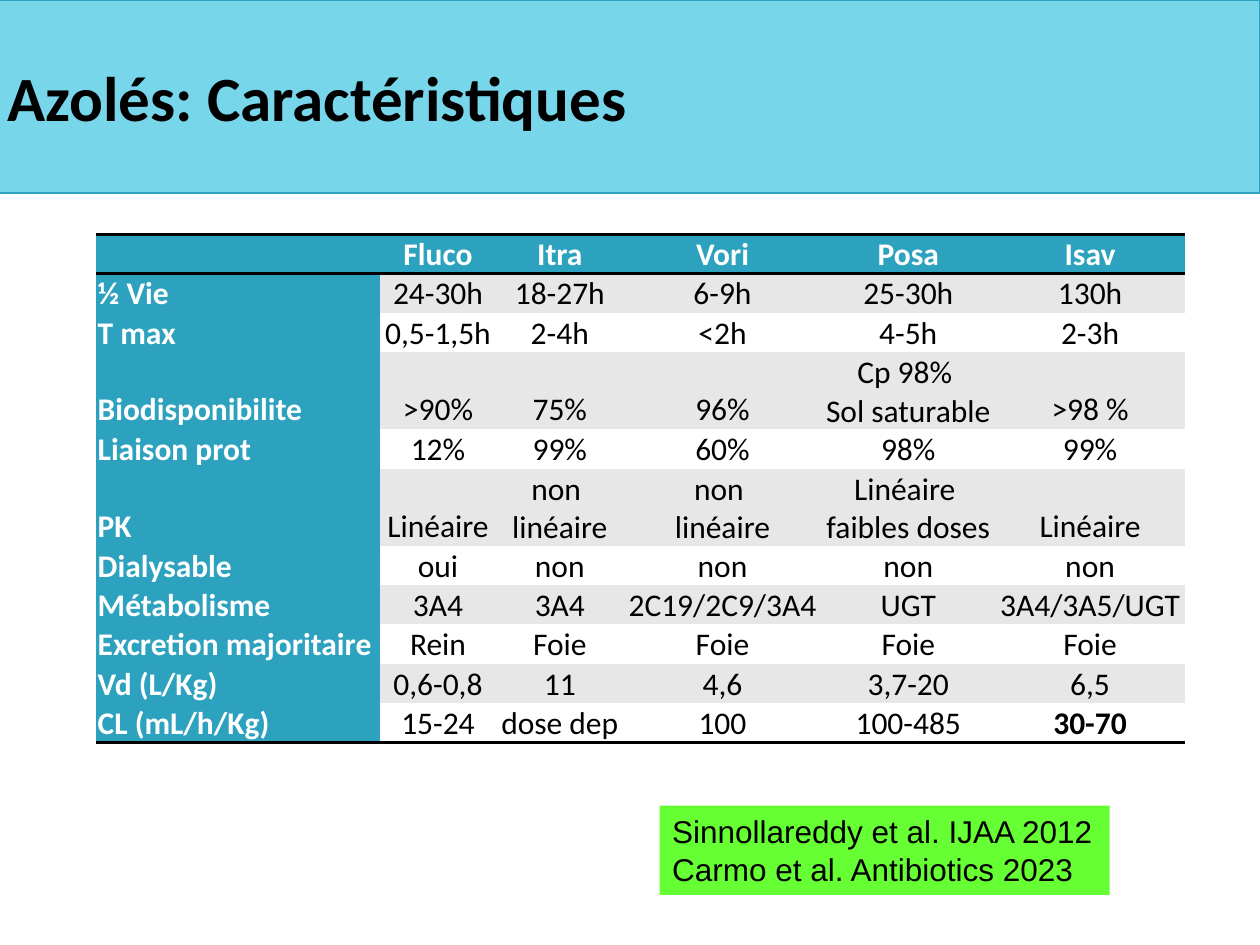
"""Build the slide that compares the pharmacology of azole antifungals."""
from dataclasses import dataclass
from typing import Any

import lxml.etree
import pptx
import pptx.dml.color
import pptx.enum.shapes
import pptx.enum.text
import pptx.oxml.ns
import pptx.util

Cm = pptx.util.Cm
Pt = pptx.util.Pt
ALIGN = pptx.enum.text.PP_ALIGN
ANCHOR = pptx.enum.text.MSO_ANCHOR
AUTO_SIZE = pptx.enum.text.MSO_AUTO_SIZE

BLACK, WHITE, GREY = "000000", "FFFFFF", "E7E7E7"
TEAL, SKY, GREEN = "2DA2BF", "78D6EA", "66FF33"
NO_GRID_STYLE = "{2D5ABB26-0587-4C30-8999-92F81FD0307C}"

COLUMN_WIDTHS = (5.72, 2.34, 2.57, 3.99, 3.5, 3.83)
ROW_HEIGHT = 0.53
CELL_FORMAT = {
    "margin_left": Cm(0.03), "margin_right": Cm(0.03),
    "margin_top": Cm(0.03), "margin_bottom": 0,
    "vertical_anchor": ANCHOR.BOTTOM,
}


@dataclass(frozen=True)
class Box:
    left: float
    top: float
    width: float
    height: float

    def lengths(self) -> tuple:
        return Cm(self.left), Cm(self.top), Cm(self.width), Cm(self.height)


@dataclass(frozen=True)
class TextStyle:
    font: str
    size: float
    color: str = BLACK
    bold: bool = False
    align: Any = ALIGN.LEFT


@dataclass(frozen=True)
class Property:
    label: str
    values: tuple
    bold_last: bool = False


DRUGS = Property("", ("Fluco", "Itra", "Vori", "Posa", "Isav"))
PROPERTIES = (
    Property("½ Vie", ("24-30h", "18-27h", "6-9h", "25-30h", "130h")),
    Property("T max", ("0,5-1,5h", "2-4h", "<2h", "4-5h", "2-3h")),
    Property("Biodisponibilite", (">90%", "75%", "96%", "Cp 98% \nSol saturable", ">98 %")),
    Property("Liaison prot", ("12%", "99%", "60%", "98%", "99%")),
    Property("PK", ("Linéaire", "non \nlinéaire", "non \nlinéaire",
                    "Linéaire \nfaibles doses", "Linéaire")),
    Property("Dialysable", ("oui", "non", "non", "non", "non")),
    Property("Métabolisme", ("3A4", "3A4", "2C19/2C9/3A4", "UGT", "3A4/3A5/UGT")),
    Property("Excretion majoritaire", ("Rein", "Foie", "Foie", "Foie", "Foie")),
    Property("Vd (L/Kg)", ("0,6-0,8", "11", "4,6", "3,7-20", "6,5")),
    Property("CL (mL/h/Kg)", ("15-24", "dose dep", "100", "100-485", "30-70"), bold_last=True),
)


def hex_color(value: str) -> pptx.dml.color.RGBColor:
    return pptx.dml.color.RGBColor.from_string(value)


def apply_format(target: Any, values: dict) -> None:
    for name, value in values.items():
        setattr(target, name, value)


def fill_solid(target: Any, color: str) -> None:
    target.fill.solid()
    target.fill.fore_color.rgb = hex_color(color)


def write_text(text_frame: Any, text: str, style: TextStyle) -> None:
    text_frame.text = text
    for paragraph in text_frame.paragraphs:
        paragraph.alignment = style.align
        for run in paragraph.runs:
            apply_format(run.font, {"name": style.font, "size": Pt(style.size), "bold": style.bold})
            run.font.color.rgb = hex_color(style.color)


def add_border(cell: Any, tag: str, position: int) -> None:
    qn = pptx.oxml.ns.qn
    line = lxml.etree.Element(qn(tag), w=str(Pt(2)))
    solid_fill = lxml.etree.SubElement(line, qn("a:solidFill"))
    lxml.etree.SubElement(solid_fill, qn("a:srgbClr"), val=BLACK)
    cell._tc.get_or_add_tcPr().insert(position, line)


def format_title(title: Any) -> None:
    box = Box(-0.1, 0, 25.5, 3.89)
    apply_format(title, dict(zip(("left", "top", "width", "height"), box.lengths())))
    fill_solid(title, SKY)
    title.line.color.rgb = hex_color(TEAL)
    title.line.width = Pt(0.75)
    apply_format(title.text_frame, {"vertical_anchor": ANCHOR.MIDDLE, "auto_size": AUTO_SIZE.NONE})
    write_text(title.text_frame, "Azolés: Caractéristiques", TextStyle("Calibri", 36, bold=True))


def add_property_table(slide: Any, box: Box) -> None:
    rows = (DRUGS, *PROPERTIES)
    last_row = len(rows) - 1
    frame = slide.shapes.add_table(len(rows), len(COLUMN_WIDTHS), *box.lengths())
    table = frame.table
    apply_format(table, {"first_row": False, "horz_banding": False})
    table._tbl.tblPr.find(pptx.oxml.ns.qn("a:tableStyleId")).text = NO_GRID_STYLE
    for column, width in zip(table.columns, COLUMN_WIDTHS):
        column.width = Cm(width)
    for row_index, entry in enumerate(rows):
        table.rows[row_index].height = Cm(ROW_HEIGHT)
        for column_index, text in enumerate((entry.label, *entry.values)):
            cell = table.cell(row_index, column_index)
            is_heading = row_index == 0 or column_index == 0
            is_last = column_index == len(entry.values)
            style = TextStyle(
                "Calibri", 18, WHITE if is_heading else BLACK,
                bold=is_heading or (entry.bold_last and is_last),
                align=ALIGN.CENTER if column_index else ALIGN.LEFT)
            apply_format(cell, CELL_FORMAT)
            write_text(cell.text_frame, text, style)
            fill_solid(cell, TEAL if is_heading else GREY if row_index % 2 else WHITE)
            if row_index in (0, last_row):
                add_border(cell, "a:lnB", 0)
            if row_index == 0:
                add_border(cell, "a:lnT", 0)
    frame.height = Cm(box.height)


def add_references(slide: Any, box: Box) -> None:
    references = slide.shapes.add_textbox(*box.lengths())
    fill_solid(references, GREEN)
    apply_format(references.text_frame, {"word_wrap": False, "auto_size": AUTO_SIZE.SHAPE_TO_FIT_TEXT})
    write_text(references.text_frame, "Sinnollareddy et al. IJAA 2012\nCarmo et al. Antibiotics 2023",
               TextStyle("Arial", 18))


def main() -> None:
    presentation = pptx.Presentation()
    apply_format(presentation, {"slide_width": Cm(25.4), "slide_height": Cm(19.05)})
    slide = presentation.slides.add_slide(presentation.slide_layouts[5])
    format_title(slide.shapes.title)
    add_references(slide, Box(13.3, 16.24, 9.07, 1.8))
    add_property_table(slide, Box(1.94, 4.72, 21.95, 10.19))
    presentation.save("out.pptx")


if __name__ == "__main__":
    main()
